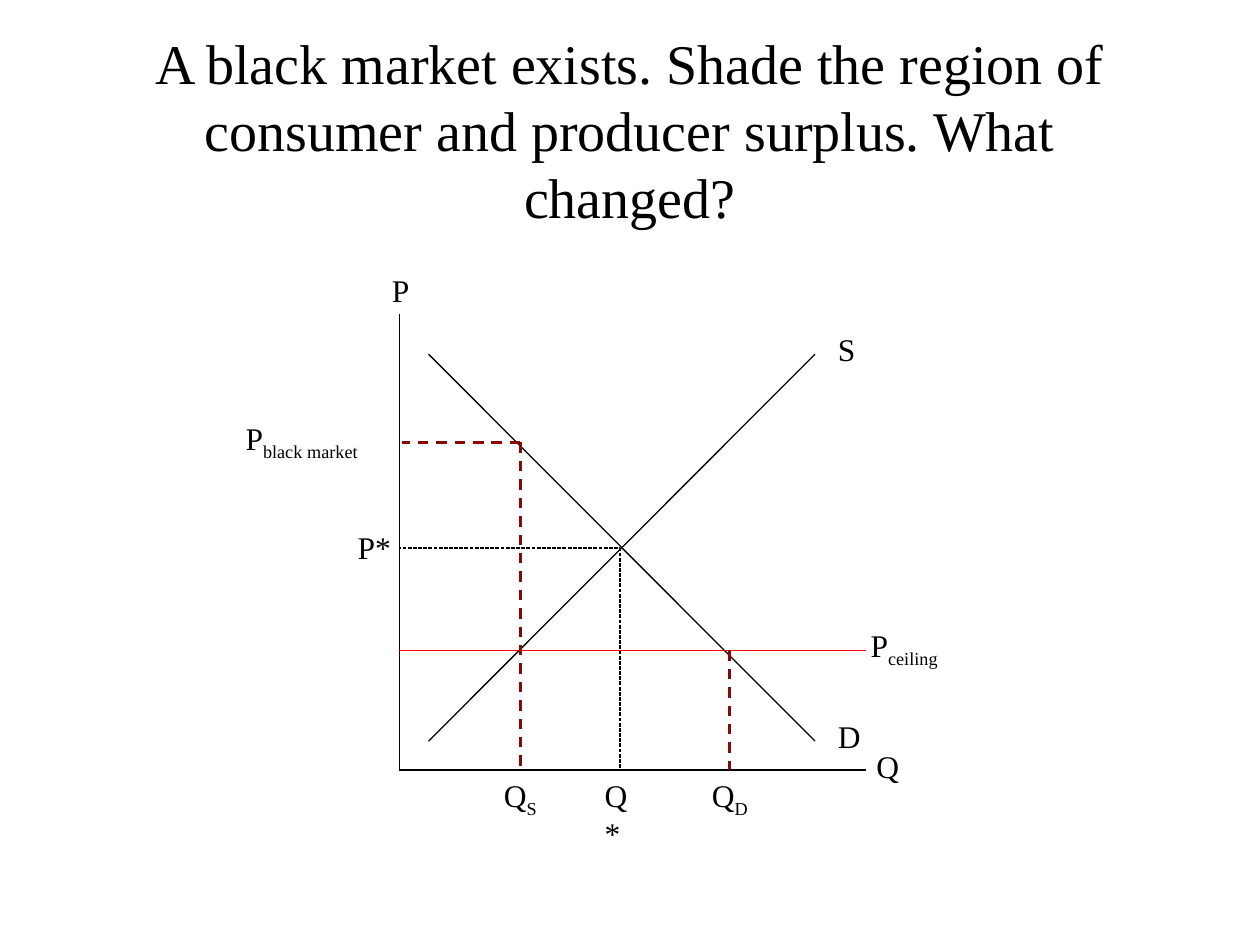
from lxml import etree
from pptx import Presentation
from pptx import util as u
from pptx.dml.color import RGBColor
from pptx.enum import dml, shapes, text
from pptx.oxml.ns import qn

COLORS = {"ink": "000000", "ceiling": "FF0000", "shortage": "860908"}
FONT = "Times New Roman"

# Places on the graph, in cm
LEFT, RIGHT, TOP, BOTTOM = 8.05, 17.45, 6.32, 15.52
CURVE_L, CURVE_R, CURVE_T, CURVE_B = 8.64, 16.43, 7.14, 14.94
Q_S, Q_STAR, Q_D = 10.49, 12.5, 14.71
P_BLACK, P_STAR, P_CEILING = 8.92, 11.05, 13.11


def add_run(p, content, size=18, color="ink", sub=False):
    r = p.add_run()
    r.text = content
    r.font.name = FONT
    r.font.size = u.Pt(size)
    r.font.color.rgb = RGBColor.from_string(COLORS[color])
    if sub:
        r.font._element.set("baseline", "-25000")
    return r


class Graph:
    def __init__(self, prs):
        self.s = prs.slides.add_slide(prs.slide_layouts[5])

    def style_line(self, line, color, width, dash):
        line.color.rgb = RGBColor.from_string(COLORS[color])
        line.width = u.Pt(width)
        if dash:
            line.dash_style = dash

    def title(self, content, x, y, w, h):
        sp = self.s.shapes.title
        sp.left, sp.top, sp.width, sp.height = map(u.Cm, (x, y, w, h))
        tf = sp.text_frame
        tf.word_wrap = True
        tf.auto_size = text.MSO_AUTO_SIZE.NONE
        tf.vertical_anchor = text.MSO_ANCHOR.MIDDLE
        p = tf.paragraphs[0]
        p.alignment = text.PP_ALIGN.CENTER
        add_run(p, content, size=32)

    def line(self, x1, y1, x2, y2, color="ink", width=0.75, dash=None):
        ends = map(u.Cm, (x1, y1, x2, y2))
        c = self.s.shapes.add_connector(shapes.MSO_CONNECTOR.STRAIGHT, *ends)
        self.style_line(c.line, color, width, dash)
        etree.SubElement(c._element.spPr, qn("a:effectLst"))

    def outline(self, x1, y1, x2, y2, dash):
        box = map(u.Cm, (x1, y1, x2 - x1, y2 - y1))
        sp = self.s.shapes.add_shape(shapes.MSO_SHAPE.RECTANGLE, *box)
        sp.shadow.inherit = False
        sp.fill.background()
        self.style_line(sp.line, "ink", 0.75, dash)

    def label(self, content, x, y, w, sub=None, wrap=False):
        tb = self.s.shapes.add_textbox(u.Cm(x), u.Cm(y), u.Cm(w), u.Cm(1.02))
        tf = tb.text_frame
        tf.word_wrap = wrap
        tf.auto_size = text.MSO_AUTO_SIZE.SHAPE_TO_FIT_TEXT
        p = tf.paragraphs[0]
        add_run(p, content)
        if sub:
            add_run(p, sub, sub=True)


def main():
    prs = Presentation()
    prs.slide_width, prs.slide_height = u.Cm(25.4), u.Cm(19.05)
    g = Graph(prs)
    g.title("A black market exists. Shade the region of consumer and "
            "producer surplus. What changed?", 2.54, 1.4, 20.32, 2.41)

    # Axes
    g.line(LEFT, TOP, LEFT, BOTTOM)
    g.line(RIGHT, BOTTOM, LEFT, BOTTOM)
    g.label("P", 7.65, 5.33, 0.94)
    g.label("Q", 17.42, 14.94, 1.02)

    # Supply and demand
    g.line(CURVE_L, CURVE_B, CURVE_R, CURVE_T)
    g.line(CURVE_L, CURVE_T, CURVE_R, CURVE_B)
    g.label("S", 16.64, 6.53, 0.94)
    g.label("D", 16.64, 14.33, 0.97)

    # Equilibrium
    g.outline(LEFT, P_STAR, Q_STAR, BOTTOM, dml.MSO_LINE.SQUARE_DOT)
    g.label("Q*", 11.94, BOTTOM, 1.14, wrap=True)
    g.label("P*", 6.96, 10.52, 1.19)

    # Price ceiling
    g.line(LEFT, P_CEILING, RIGHT, P_CEILING, color="ceiling")
    g.label("P", 17.3, 12.5, 2.16, sub="ceiling")

    # Quantities under the ceiling and the black market price
    for x1, y1, x2, y2 in ((Q_S, P_BLACK, Q_S, BOTTOM),
                           (Q_D, P_CEILING, Q_D, BOTTOM),
                           (Q_S, P_BLACK, LEFT + 0.05, P_BLACK)):
        g.line(x1, y1, x2, y2, color="shortage", width=1.5,
               dash=dml.MSO_LINE.DASH)
    g.label("Q", 9.91, BOTTOM, 1.3, sub="S")
    g.label("Q", 14.1, BOTTOM, 1.32, sub="D")
    g.label("P", 4.7, 8.33, 3.35, sub="black market")

    prs.save("out.pptx")


if __name__ == "__main__":
    main()
